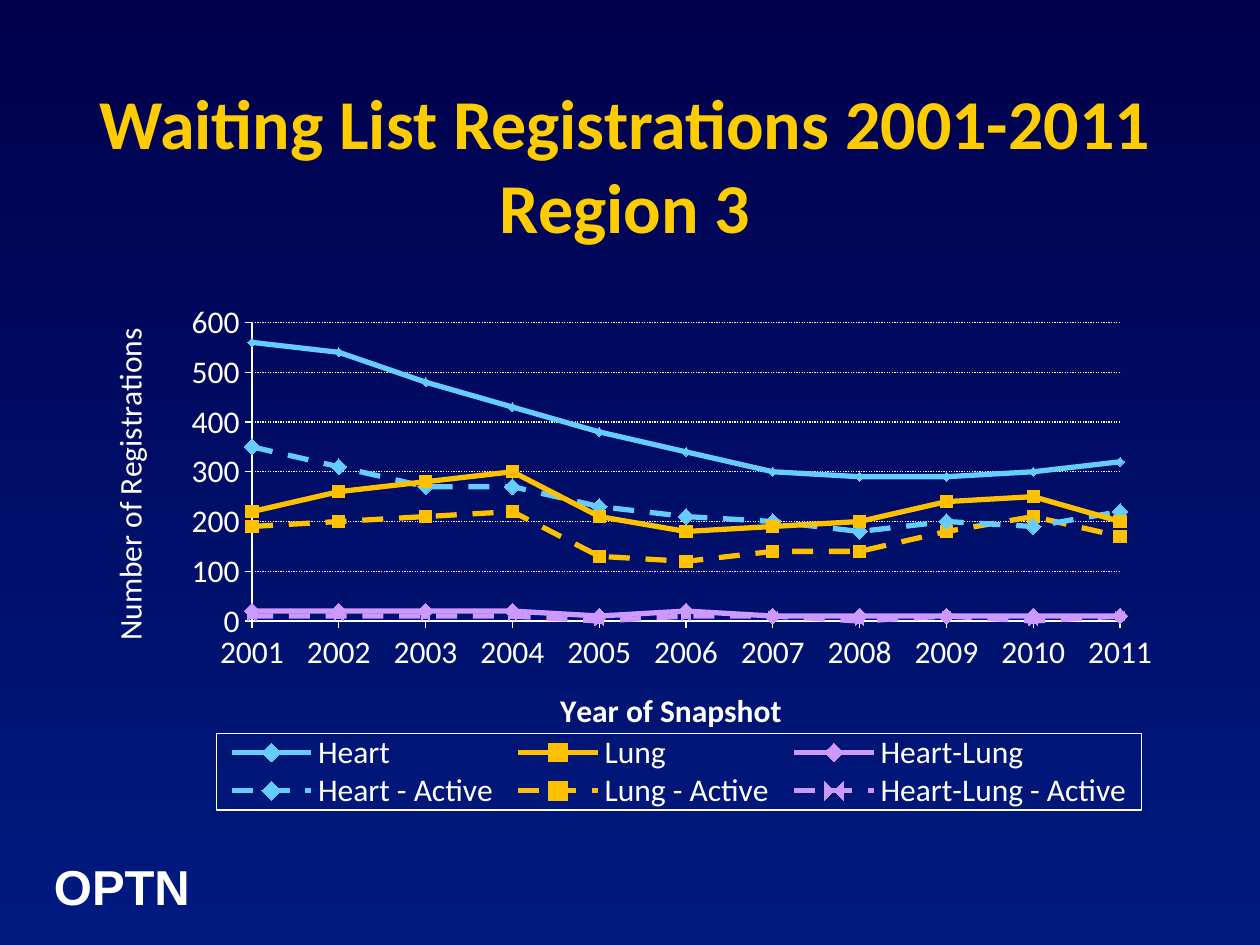
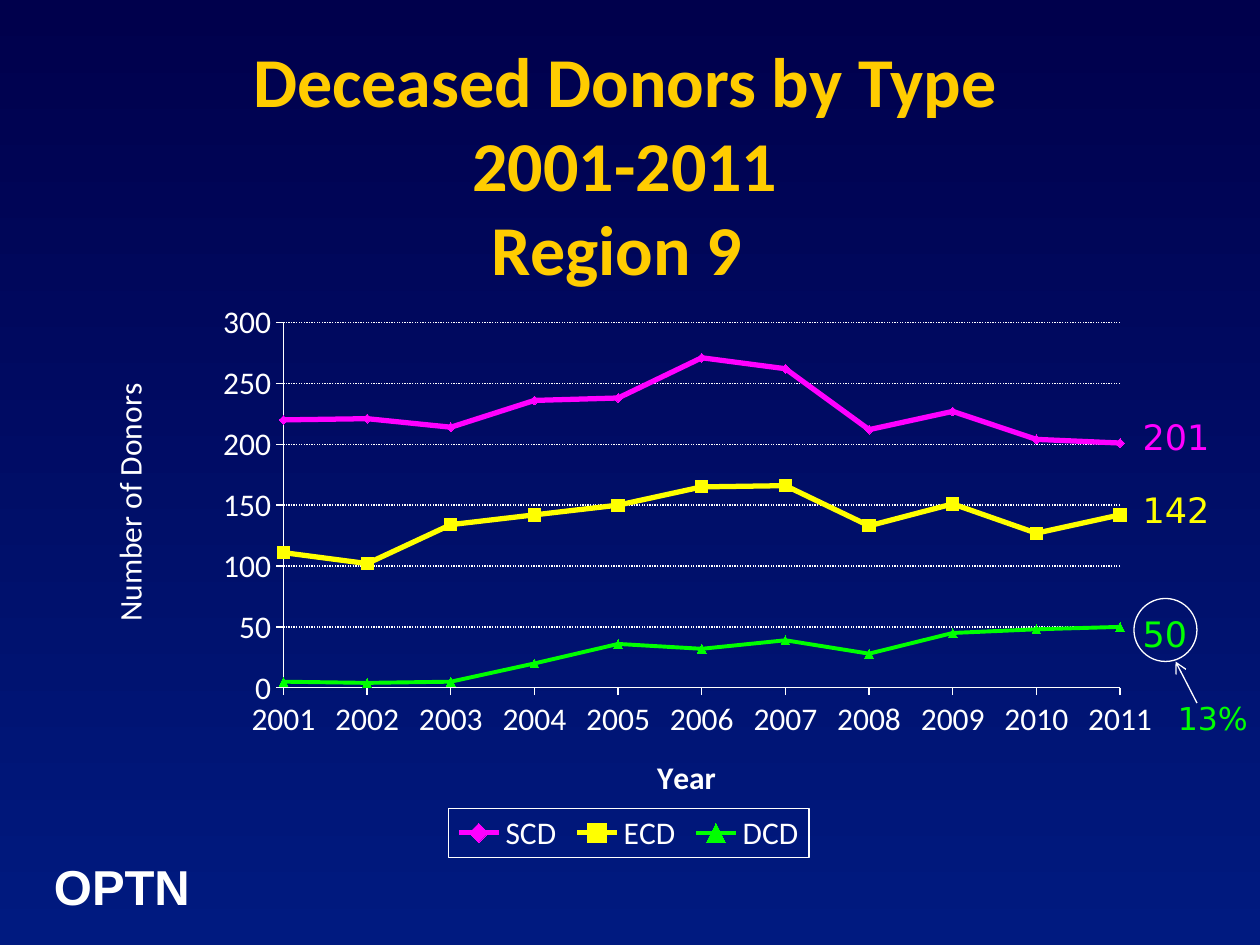
from lxml import etree
from pptx import Presentation
from pptx.chart.data import XyChartData
from pptx.dml.color import RGBColor
from pptx.enum.chart import XL_CHART_TYPE, XL_LEGEND_POSITION, XL_MARKER_STYLE, XL_TICK_MARK
from pptx.enum.dml import MSO_LINE
from pptx.enum.shapes import MSO_CONNECTOR, MSO_SHAPE
from pptx.enum.text import MSO_ANCHOR, PP_ALIGN
from pptx.oxml import parse_xml
from pptx.oxml.ns import nsdecls, qn
from pptx.util import Inches, Pt

SCATTER = XL_CHART_TYPE.XY_SCATTER_LINES
BOTTOM = XL_LEGEND_POSITION.BOTTOM
AUTO, SQUARE, DIAMOND = XL_MARKER_STYLE.AUTOMATIC, XL_MARKER_STYLE.SQUARE, XL_MARKER_STYLE.DIAMOND
TICK_OUT = XL_TICK_MARK.OUTSIDE
DASH, DOTS = MSO_LINE.DASH, MSO_LINE.ROUND_DOT
STRAIGHT, OVAL = MSO_CONNECTOR.STRAIGHT, MSO_SHAPE.OVAL
MIDDLE, CENTER = MSO_ANCHOR.MIDDLE, PP_ALIGN.CENTER

COLORS = {
    "top": "00004C", "bottom": "001A80", "white": "FFFFFF", "title": "FFCC00",
    "heart": "66CCFF", "lung": "FFC000", "heart_lung": "CC99FF",
    "scd": "FF00FF", "ecd": "FFFF00", "dcd": "00FF00",
}
YEARS = range(2001, 2012)
TITLE_BOX = (0.5, 0.67, 8.92, 1.25)
CHART_BOX = (0.75, 2.33, 8.5, 4.5)
MARK_BOX = (0.33, 6.75, 1.31, 0.57)

REGISTRATIONS = {
    "x_title": "Year of Snapshot", "y_title": "Number of Registrations",
    "top": 600, "step": 100,
    "plot": (1.25, 0.23, 6.89, 2.37), "legend": (0.97, 3.49, 7.34, 0.61),
    "x_place": (3.65, 3.09), "y_place": (0.06, 0.23),
    "series": [
        ("Heart", "heart", 3, None, AUTO, 5,
         (560, 540, 480, 430, 380, 340, 300, 290, 290, 300, 320)),
        ("Lung", "lung", 3, None, SQUARE, 7,
         (220, 260, 280, 300, 210, 180, 190, 200, 240, 250, 200)),
        ("Heart-Lung", "heart_lung", 3, None, DIAMOND, 9,
         (20, 20, 20, 20, 10, 20, 10, 10, 10, 10, 10)),
        ("Heart - Active", "heart", 3, DASH, DIAMOND, 9,
         (350, 310, 270, 270, 230, 210, 200, 180, 200, 190, 220)),
        ("Lung - Active", "lung", 3, DASH, SQUARE, 7,
         (190, 200, 210, 220, 130, 120, 140, 140, 180, 210, 170)),
        ("Heart-Lung - Active", "heart_lung", 3, DASH, AUTO, 5,
         (10, 10, 10, 10, 0, 10, 10, 0, 10, 0, 10)),
    ],
}
DONORS = {
    "x_title": "Year", "y_title": "Number of Donors", "top": 300, "step": 50,
    "plot": (1.5, 0.23, 6.64, 2.9), "legend": (2.81, 4.11, 2.86, 0.4),
    "x_place": (4.42, 3.62), "y_place": (0.06, 0.67),
    "series": [
        ("SCD", "scd", 3, None, AUTO, 5,
         (220, 221, 214, 236, 238, 271, 262, 212, 227, 204, 201)),
        ("ECD", "ecd", 3, None, SQUARE, 7,
         (111, 102, 134, 142, 150, 165, 166, 133, 151, 127, 142)),
        ("DCD", "dcd", 2.25, None, AUTO, 5,
         (5, 4, 5, 20, 36, 32, 39, 28, 45, 48, 50)),
    ],
}


def color(name):
    return RGBColor.from_string(COLORS[name])


def inches(values):
    return [Inches(value) for value in values]


def add_text(page, place, lines, size, font, tint, bold=False, wrap=True, align=None, anchor=None):
    box = page.shapes.add_textbox(*inches(place))
    frame = box.text_frame
    frame.word_wrap = wrap
    if anchor is not None:
        frame.vertical_anchor = anchor
    para = frame.paragraphs[0]
    if align is not None:
        para.alignment = align
    for index, line in enumerate(lines):
        if index:
            para.add_line_break()
        span = para.add_run()
        span.text = line
        span.font.size, span.font.name, span.font.bold = Pt(size), font, bold
        span.font.color.rgb = color(tint)


def add_page(deck, title):
    page = deck.slides.add_slide(deck.slide_layouts[6])
    fill = page.background.fill
    fill.gradient()
    fill.gradient_angle = 270
    for stop, tint, position in zip(fill.gradient_stops, ("top", "bottom"), (0, 1)):
        stop.color.rgb = color(tint)
        stop.position = position
    add_text(page, MARK_BOX, ["OPTN"], 28, "Arial", "white", bold=True)
    add_text(page, TITLE_BOX, title, 40, "Calibri", "title", bold=True, align=CENTER, anchor=MIDDLE)
    return page


def set_layout(parent, position, place, size, inner=False):
    for old in parent.findall(qn("c:layout")):
        parent.remove(old)
    layout = parse_xml(f"<c:layout {nsdecls('c')}><c:manualLayout/></c:layout>")
    entries = [("layoutTarget", "inner")] if inner else []
    entries += [("xMode", "edge"), ("yMode", "edge")]
    entries += [(tag, length / whole) for tag, length, whole in zip("xywh", place, size * 2)]
    for tag, value in entries:
        etree.SubElement(layout[0], qn(f"c:{tag}")).set("val", str(value))
    parent.insert(position, layout)


def style_axis(axis, title, place, size, bold, low, high, step):
    axis.minimum_scale, axis.maximum_scale, axis.major_unit = low, high, step
    axis.major_tick_mark = TICK_OUT
    axis.format.line.color.rgb = color("white")
    axis.format.line.width = Pt(0.75)
    axis.tick_labels.number_format = "0"
    axis.tick_labels.number_format_is_linked = False
    axis.has_title = True
    span = axis.axis_title.text_frame.paragraphs[0].add_run()
    span.text = title
    span.font.size, span.font.name, span.font.bold = Pt(18), "Calibri", bold
    span.font.color.rgb = color("white")
    set_layout(axis.axis_title.element, 1, place, size)


def style_legend(chart, place, size):
    chart.has_legend = True
    chart.legend.position = BOTTOM
    chart.legend.include_in_layout = False
    chart.legend.font.size = Pt(18)
    chart.legend.font.name = "Calibri"
    chart.legend.font.color.rgb = color("white")
    legend = chart.element.xpath(".//c:legend")[0]
    set_layout(legend, 1, place, size)
    legend.find(qn("c:txPr")).addprevious(parse_xml(
        f'<c:spPr {nsdecls("c", "a")}><a:noFill/><a:ln w="9525"><a:solidFill>'
        f'<a:srgbClr val="{COLORS["white"]}"/></a:solidFill></a:ln></c:spPr>'))


def style_series(series, tint, width, dash, marker, size):
    series.smooth = False
    series.format.line.color.rgb = color(tint)
    series.format.line.width = Pt(width)
    if dash is not None:
        series.format.line.dash_style = dash
    series.marker.style, series.marker.size = marker, size
    series.marker.format.fill.solid()
    series.marker.format.fill.fore_color.rgb = color(tint)
    series.marker.format.line.color.rgb = color(tint)


def add_trend_chart(page, place, trend):
    data = XyChartData()
    for name, *_, values in trend["series"]:
        points = data.add_series(name)
        for year, value in zip(YEARS, values):
            points.add_data_point(year, value)
    chart = page.shapes.add_chart(SCATTER, *inches(place), data).chart
    chart.has_title = False
    chart.font.size, chart.font.name = Pt(18), "Calibri"
    chart.font.color.rgb = color("white")
    chart.plots[0].vary_by_categories = False
    for series, (_, *style, _) in zip(chart.plots[0].series, trend["series"]):
        style_series(series, *style)

    size = place[2:]
    years, counts = chart.category_axis, chart.value_axis
    style_axis(years, trend["x_title"], trend["x_place"], size, True, YEARS[0], YEARS[-1], 1)
    style_axis(counts, trend["y_title"], trend["y_place"], size, False, 0, trend["top"], trend["step"])
    years.has_major_gridlines = False
    counts.has_major_gridlines = True
    grid = counts.major_gridlines.format.line
    grid.color.rgb, grid.width, grid.dash_style = color("white"), Pt(0.75), DOTS
    body = counts.axis_title.element.xpath(".//a:bodyPr")[0]
    body.set("rot", "-5400000")
    body.set("vert", "horz")
    set_layout(chart.element.xpath(".//c:plotArea")[0], 0, trend["plot"], size, inner=True)
    style_legend(chart, trend["legend"], size)


def add_end_labels(page, left, top):
    for text, tint, offset, width in (("201", "scd", 0, 0.74), ("142", "ecd", 0.58, 0.74),
                                      ("50", "dcd", 1.56, 0.56)):
        add_text(page, (left, top + offset, width, 0.44), [text], 20, "DejaVu Sans", tint, wrap=False)
    add_text(page, (left + 0.28, top + 2.25, 0.98, 0.4), ["13%"], 18, "DejaVu Sans", "dcd")

    arrow = page.shapes.add_connector(
        STRAIGHT, *inches((left + 0.53, top + 2.33, left + 0.36, top + 2)))
    arrow.line.color.rgb = color("white")
    arrow.line.width = Pt(0.75)
    etree.SubElement(arrow.line._get_or_add_ln(), qn("a:tailEnd")).set("type", "arrow")
    etree.SubElement(arrow._element.spPr, qn("a:effectLst"))

    ring = page.shapes.add_shape(OVAL, *inches((left + 0.03, top + 1.5, 0.5, 0.5)))
    ring.shadow.inherit = False
    ring.fill.background()
    ring.line.color.rgb = color("white")
    ring.line.width = Pt(0.75)


def main():
    deck = Presentation()
    deck.slide_width, deck.slide_height = Inches(10), Inches(7.5)

    page = add_page(deck, ["Waiting List Registrations 2001-2011", "Region 3"])
    add_trend_chart(page, CHART_BOX, REGISTRATIONS)

    page = add_page(deck, ["Deceased Donors by Type", "2001-2011", "Region 9 "])
    add_trend_chart(page, CHART_BOX, DONORS)
    add_end_labels(page, 8.97, 3.25)

    deck.save("out.pptx")


if __name__ == "__main__":
    main()
